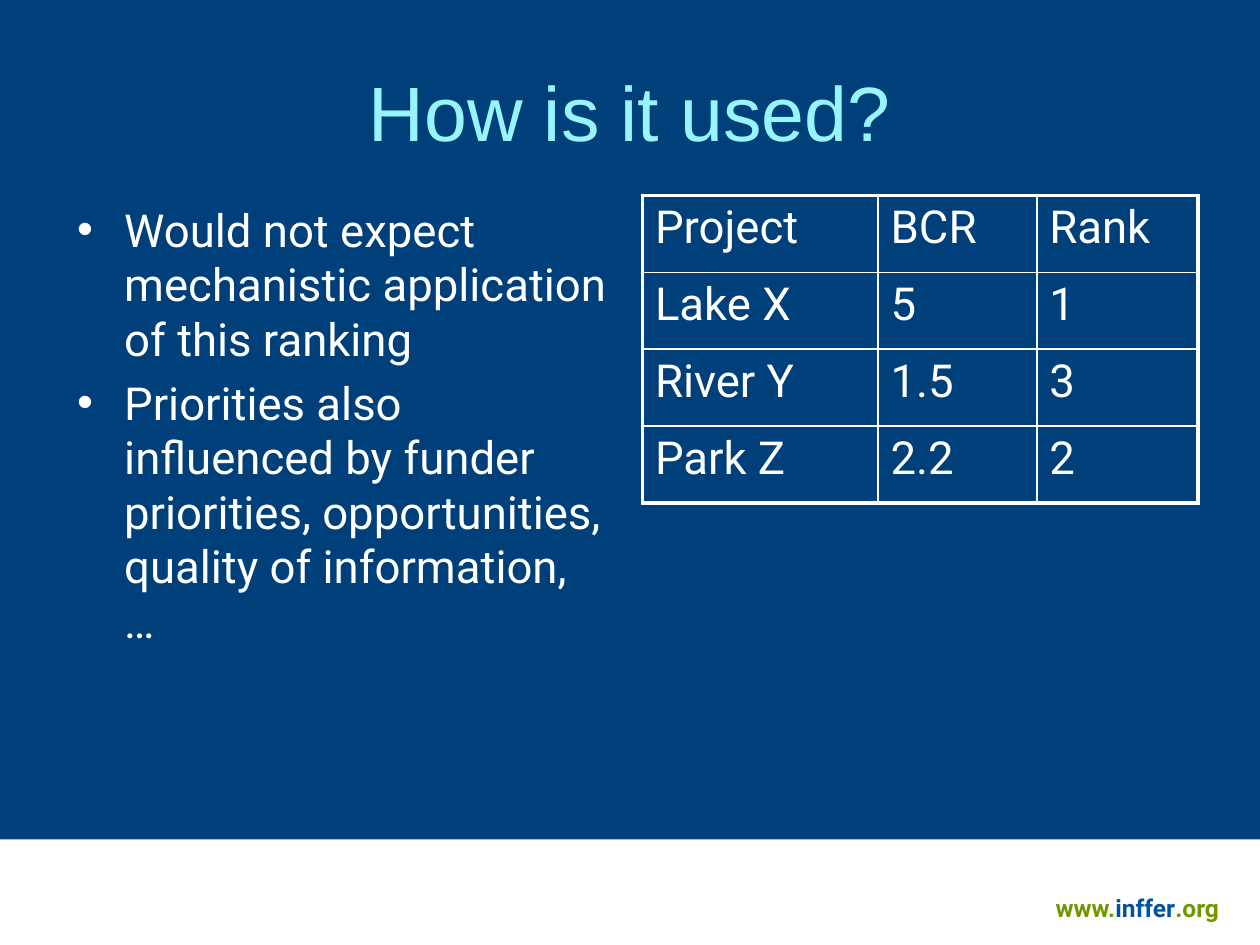
from dataclasses import dataclass

from lxml.etree import SubElement
from pptx import Presentation
from pptx.dml.color import RGBColor
from pptx.enum.shapes import MSO_SHAPE
from pptx.enum.text import MSO_ANCHOR, MSO_AUTO_SIZE, PP_ALIGN
from pptx.oxml.ns import qn
from pptx.util import Cm, Pt

NAVY, WHITE, CYAN = "00407A", "FFFFFF", "97F5FF"
GREEN, BLUE = "739600", "00549F"
THIN, THICK = 1, 2.25


@dataclass
class Box:
    left: float
    top: float
    width: float
    height: float

    def lengths(self) -> tuple:
        return Cm(self.left), Cm(self.top), Cm(self.width), Cm(self.height)


def color(value: str) -> RGBColor:
    return RGBColor.from_string(value)


def add_text(paragraph, text: str, *, size=26, font="Roboto", fill=WHITE, bold=False) -> None:
    run = paragraph.add_run()
    run.text = text
    run.font.size = Pt(size)
    run.font.name = font
    run.font.bold = bold
    run.font.color.rgb = color(fill)


def place(shape, box: Box) -> None:
    shape.left, shape.top, shape.width, shape.height = box.lengths()
    shape.text_frame.auto_size = MSO_AUTO_SIZE.NONE


def add_bullet(paragraph) -> None:
    properties = paragraph._p.get_or_add_pPr()
    properties.set("marL", str(Cm(0.95)))
    properties.set("indent", str(-Cm(0.95)))
    SubElement(properties, qn("a:buFont"), typeface="Arial")
    SubElement(properties, qn("a:buChar"), char="•")


def set_borders(cell, widths: dict[str, float]) -> None:
    properties = cell._tc.get_or_add_tcPr()
    for side, width in widths.items():
        line = SubElement(properties, qn(f"a:ln{side}"), w=str(Pt(width)))
        solid = SubElement(line, qn("a:solidFill"))
        SubElement(solid, qn("a:srgbClr"), val=WHITE)


def add_ranking(slide, box: Box, rows: list[tuple], widths: list[float]) -> None:
    last_row, last_column = len(rows) - 1, len(widths) - 1
    table = slide.shapes.add_table(len(rows), len(widths), *box.lengths()).table
    table.first_row = table.horz_banding = False
    for column, width in zip(table.columns, widths):
        column.width = Cm(width)
    for i, row in enumerate(rows):
        table.rows[i].height = Cm(box.height / len(rows))
        for j, text in enumerate(row):
            cell = table.cell(i, j)
            # Thick outer frame, thin inner grid
            set_borders(cell, {
                "L": THICK if j == 0 else THIN,
                "R": THICK if j == last_column else THIN,
                "T": THICK if i == 0 else THIN,
                "B": THICK if i == last_row else THIN,
            })
            cell.fill.background()
            add_text(cell.text_frame.paragraphs[0], text)


def main() -> None:
    presentation = Presentation()
    presentation.slide_width, presentation.slide_height = Cm(25.4), Cm(19.05)
    slide = presentation.slides.add_slide(presentation.slide_layouts[1])
    slide.background.fill.solid()
    slide.background.fill.fore_color.rgb = color(NAVY)

    # Footer band with web address
    band = slide.shapes.add_shape(MSO_SHAPE.RECTANGLE, *Box(0, 16.92, 25.4, 2.13).lengths())
    band.shadow.inherit = False
    band.fill.solid()
    band.fill.fore_color.rgb = color(WHITE)
    band.line.fill.background()
    address = slide.shapes.add_textbox(*Box(21.03, 17.88, 4.06, 0.84).lengths())
    address.text_frame.word_wrap = False
    for text, fill in (("www.", GREEN), ("inffer", BLUE), (".org", GREEN)):
        add_text(address.text_frame.paragraphs[0], text, size=14, fill=fill, bold=True)

    # Title
    title = slide.shapes.title
    place(title, Box(1.27, 0.64, 22.86, 3.18))
    title.text_frame.vertical_anchor = MSO_ANCHOR.MIDDLE
    heading = title.text_frame.paragraphs[0]
    heading.alignment = PP_ALIGN.CENTER
    add_text(heading, "How is it used?", size=44, font="Arial", fill=CYAN)

    # Bullet list
    body = slide.placeholders[1]
    place(body, Box(1.3, 3.94, 11.23, 13))
    bullets = [
        "Would not expect mechanistic application of this ranking",
        "Priorities also influenced by funder priorities, opportunities, "
        "quality of information, …",
    ]
    for i, text in enumerate(bullets):
        paragraph = body.text_frame.add_paragraph() if i else body.text_frame.paragraphs[0]
        add_bullet(paragraph)
        paragraph.space_before = Pt(5.2 if i else 0)
        add_text(paragraph, text)

    # Ranking table
    rows = [
        ("Project", "BCR", "Rank"),
        ("Lake X", "5", "1"),
        ("River Y", "1.5", "3"),
        ("Park Z", "2.2", "2"),
    ]
    add_ranking(slide, Box(12.95, 3.94, 11.2, 6.2), rows, [4.75, 3.2, 3.25])

    presentation.save("out.pptx")


if __name__ == "__main__":
    main()
